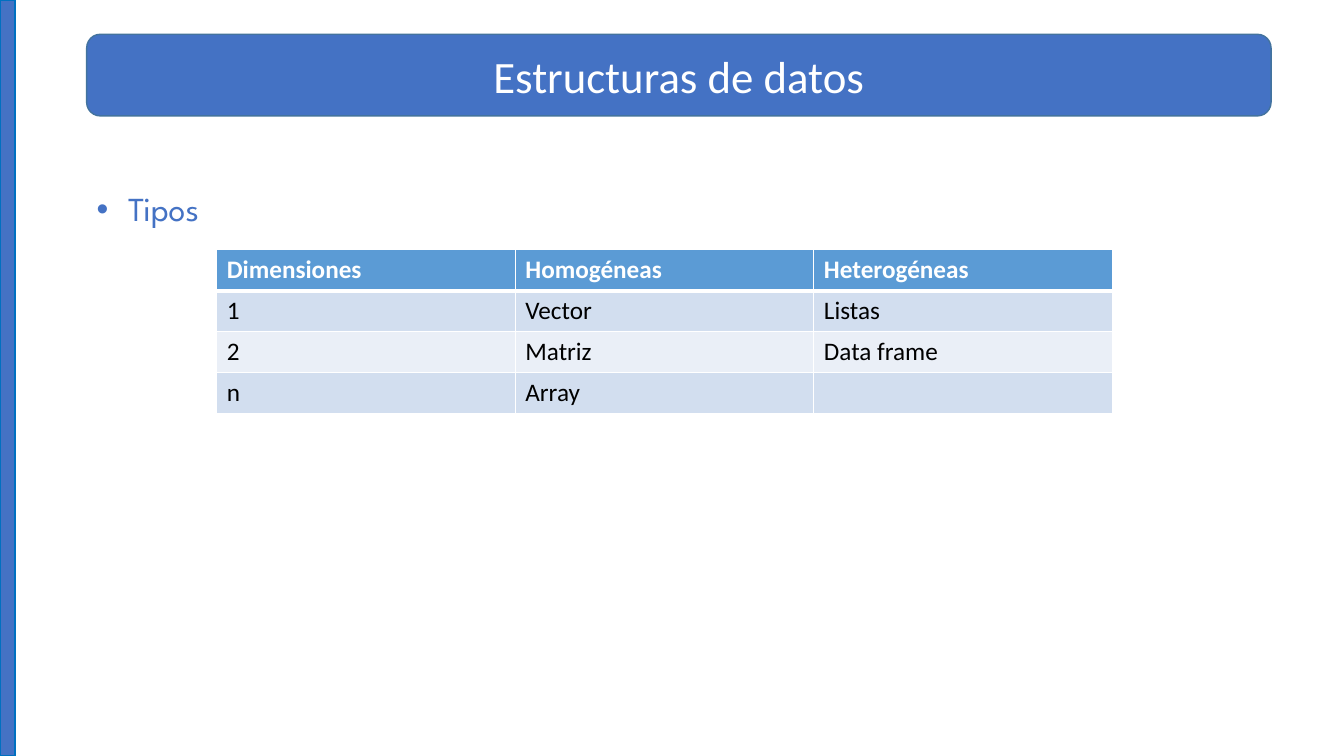
from dataclasses import dataclass

import pptx
import pptx.dml.color
import pptx.enum.shapes
import pptx.enum.text
import pptx.oxml
import pptx.oxml.ns
import pptx.util
from pptx.util import Pt


@dataclass(frozen=True)
class Theme:
    accent: str = "4472C4"
    banner_edge: str = "43739E"
    stripe_edge: str = "0070C0"
    header: str = "5B9BD5"
    odd_row: str = "D2DEEF"
    even_row: str = "EAEFF7"
    light: str = "FFFFFF"
    dark: str = "000000"
    body_font: str = "Calibri"
    topic_font: str = "League Spartan"
    title_size: int = 32
    topic_size: int = 24
    cell_size: int = 18


THEME = Theme()
SLIDE_WIDTH, SLIDE_HEIGHT = 960, 540
STRUCTURES = [
    ["Dimensiones", "Homogéneas", "Heterogéneas"],
    ["1", "Vector", "Listas"],
    ["2", "Matriz", "Data frame"],
    ["n", "Array", ""],
]


def rgb(color):
    return pptx.dml.color.RGBColor.from_string(color)


def add_run(paragraph, text, size, color, font, bold=False):
    run = paragraph.add_run()
    run.text = text
    run.font.size = Pt(size)
    run.font.color.rgb = rgb(color)
    run.font.name = font
    run.font.bold = bold


def add_panel(slide, kind, box, edge):
    panel = slide.shapes.add_shape(kind, *map(Pt, box))
    panel.shadow.inherit = False
    panel.fill.solid()
    panel.fill.fore_color.rgb = rgb(THEME.accent)
    panel.line.color.rgb = rgb(edge)
    panel.line.width = Pt(1)
    return panel


def add_title(slide, text):
    banner = add_panel(slide, pptx.enum.shapes.MSO_SHAPE.ROUNDED_RECTANGLE,
                       (61.9, 24.5, 846, 58.3), THEME.banner_edge)
    banner.text_frame.vertical_anchor = pptx.enum.text.MSO_ANCHOR.MIDDLE
    paragraph = banner.text_frame.paragraphs[0]
    paragraph.alignment = pptx.enum.text.PP_ALIGN.CENTER
    add_run(paragraph, text, THEME.title_size, THEME.light, THEME.body_font)


def add_topic(slide, text):
    """Add a bulleted, double-spaced line."""
    topic = slide.shapes.add_textbox(*map(Pt, (61.9, 102.2, 811.4, 56.2)))
    topic.text_frame.word_wrap = True
    topic.text_frame.auto_size = pptx.enum.text.MSO_AUTO_SIZE.SHAPE_TO_FIT_TEXT
    paragraph = topic.text_frame.paragraphs[0]
    paragraph.line_spacing = 2.0
    add_run(paragraph, text, THEME.topic_size, THEME.accent, THEME.topic_font)
    indent = Pt(22.5)
    properties = paragraph._p.get_or_add_pPr()
    properties.set("marL", str(indent))
    properties.set("indent", str(-indent))
    namespace = pptx.oxml.ns.nsdecls("a")
    for bullet in ('<a:buFont {} typeface="Arial"/>', '<a:buChar {} char="•"/>'):
        properties.append(pptx.oxml.parse_xml(bullet.format(namespace)))


def set_borders(cell, widths):
    """Draw the cell's borders, with widths in left, right, top, bottom order."""
    properties = cell._tc.get_or_add_tcPr()
    for position, (side, width) in enumerate(zip("LRTB", widths)):
        properties.insert(position, pptx.oxml.parse_xml(
            f'<a:ln{side} {pptx.oxml.ns.nsdecls("a")} w="{Pt(width)}">'
            f'<a:solidFill><a:srgbClr val="{THEME.light}"/></a:solidFill>'
            f'</a:ln{side}>'))


def fill_cell(cell, text, row):
    is_header = row == 0
    row_color = THEME.odd_row if row % 2 else THEME.even_row
    cell.fill.solid()
    cell.fill.fore_color.rgb = rgb(THEME.header if is_header else row_color)
    set_borders(cell, (1, 1, 3 if row == 1 else 1, 3 if is_header else 1))
    if text:
        add_run(cell.text_frame.paragraphs[0], text, THEME.cell_size,
                THEME.light if is_header else THEME.dark,
                THEME.body_font, is_header)


def add_structure_table(slide, rows):
    row_height, column_width = 29.2, 213.3
    row_count, column_count = len(rows), len(rows[0])
    table = slide.shapes.add_table(
        row_count, column_count, Pt(154.8), Pt(178.5),
        Pt(column_width * column_count), Pt(row_height * row_count)).table
    for row, texts in enumerate(rows):
        for column, text in enumerate(texts):
            fill_cell(table.cell(row, column), text, row)


def main():
    deck = pptx.Presentation()
    deck.slide_width, deck.slide_height = Pt(SLIDE_WIDTH), Pt(SLIDE_HEIGHT)
    slide = deck.slides.add_slide(deck.slide_layouts[6])
    add_title(slide, "Estructuras de datos")
    add_panel(slide, pptx.enum.shapes.MSO_SHAPE.RECTANGLE,
              (0, 0, 10.8, SLIDE_HEIGHT), THEME.stripe_edge)
    add_topic(slide, "Tipos")
    add_structure_table(slide, STRUCTURES)
    deck.save("out.pptx")


if __name__ == "__main__":
    main()
